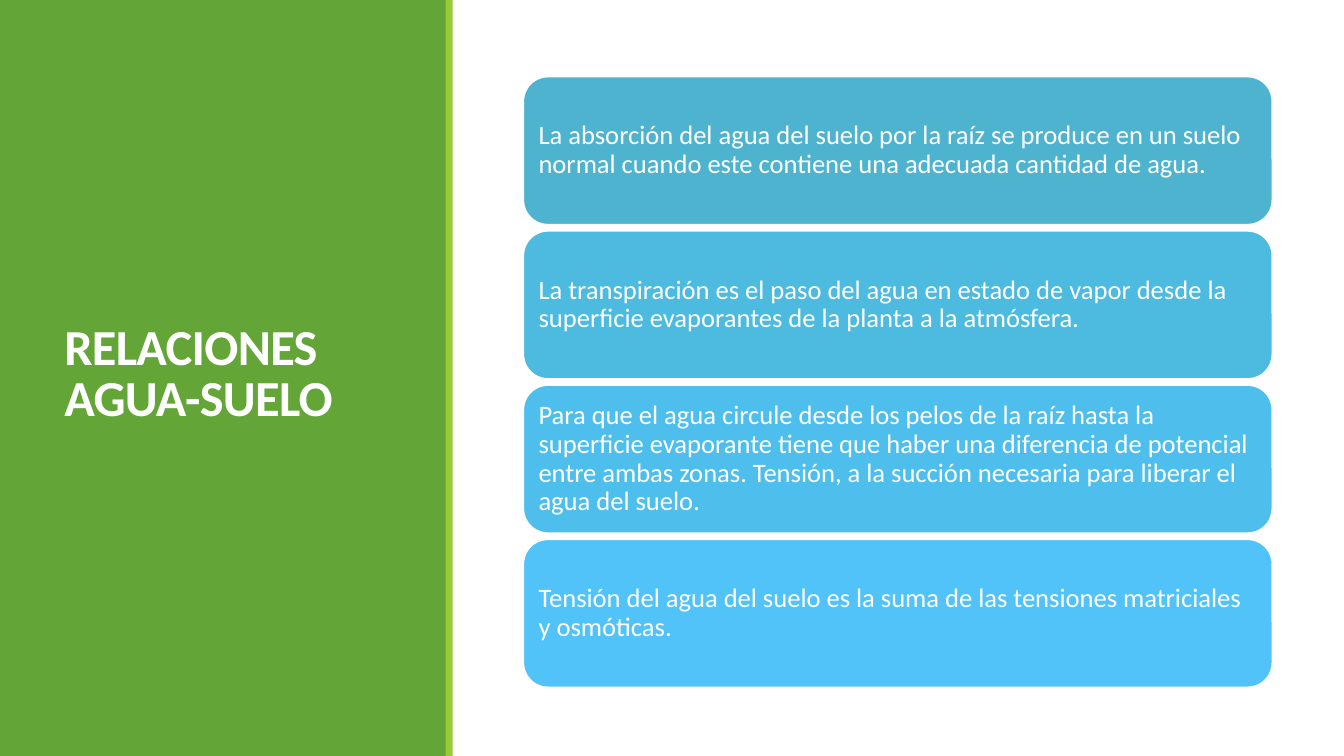
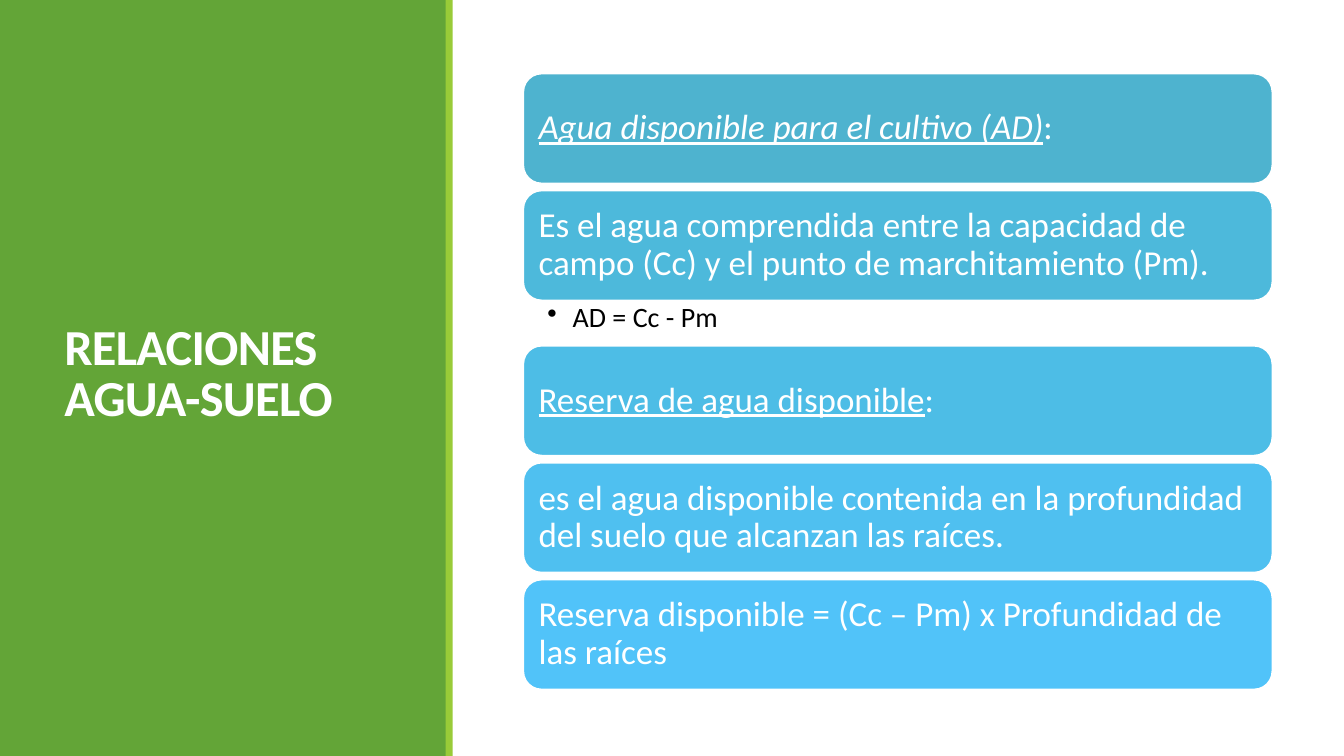
"""Build two slides on soil-water relations: a green title panel beside stacked cards."""
from dataclasses import dataclass

from lxml import etree
from pptx import Presentation
from pptx.dml.color import RGBColor
from pptx.enum import shapes, text
from pptx.oxml import ns
from pptx.util import Inches, Pt

FONT = "Calibri"
COLOURS = {
    "panel": "63A537",
    "stripe": "99CB38",
    "white": "FFFFFF",
    "black": "000000",
    "teal": "4EB3CF",
    "lagoon": "4DB9DB",
    "sea": "4DBADF",
    "blue": "4DBDE6",
    "azure": "4EBFED",
    "sky": "4FC0F0",
    "bright": "51C3F9",
}
TITLE = "RELACIONES AGUA-SUELO"
CARD_LEFT, CARD_WIDTH, DETAIL_HEIGHT = 5.19, 7.43, 0.45


@dataclass(frozen=True)
class Card:
    """A card with an optional underlined lead and a bullet below it."""

    fill: str
    body: str
    lead: str = ""
    italic_lead: bool = False
    detail: str = ""


@dataclass(frozen=True)
class Stack:
    """A column of equal cards and its measures in inches and points."""

    top: float
    height: float
    gap: float
    inset: float
    size: int
    cards: tuple[Card, ...]


STACKS = (
    Stack(0.76, 1.47, 0.06, 0.08, 19, (
        Card("teal", "La absorción del agua del suelo por la raíz se produce en un suelo "
             "normal cuando este contiene una adecuada cantidad de agua."),
        Card("sea", "La transpiración es el paso del agua en estado de vapor desde la "
             "superficie evaporantes de la planta a la atmósfera."),
        Card("azure", "Para que el agua circule desde los pelos de la raíz hasta la "
             "superficie evaporante tiene que haber una diferencia de potencial entre ambas "
             "zonas. Tensión, a la succión necesaria para liberar el agua del suelo."),
        Card("bright", "Tensión del agua del suelo es la suma de las tensiones matriciales "
             "y osmóticas."),
    )),
    Stack(0.73, 1.09, 0.07, 0.1, 25, (
        Card("teal", ":", lead="Agua disponible para el cultivo (AD)", italic_lead=True),
        Card("lagoon", "Es el agua comprendida entre la capacidad de campo (Cc) y el punto "
             "de marchitamiento (Pm).", detail="AD = Cc - Pm"),
        Card("blue", ":", lead="Reserva de agua disponible"),
        Card("sky", "es el agua disponible contenida en la profundidad del suelo que "
             "alcanzan las raíces."),
        Card("bright", "Reserva disponible = (Cc – Pm) x Profundidad de las raíces"),
    )),
)


def colour(name: str) -> RGBColor:
    """Return the named colour."""
    return RGBColor.from_string(COLOURS[name])


def add_block(slide, kind, left: float, top: float, width: float, height: float, fill: str):
    """Add a flat filled shape without outline."""
    block = slide.shapes.add_shape(
        kind, Inches(left), Inches(top), Inches(width), Inches(height))
    block.shadow.inherit = False
    block.fill.solid()
    block.fill.fore_color.rgb = colour(fill)
    block.line.fill.background()
    return block


def set_frame(frame, anchor, left: float, top: float, right: float, bottom: float) -> None:
    """Wrap a text frame and set its anchor and insets."""
    frame.word_wrap = True
    frame.vertical_anchor = anchor
    frame.margin_left, frame.margin_top = Inches(left), Inches(top)
    frame.margin_right, frame.margin_bottom = Inches(right), Inches(bottom)


def style(paragraph, size: int, ink: str, spacing: float = 0.9) -> None:
    """Set the font, colour and line spacing of a left-aligned paragraph."""
    paragraph.alignment = text.PP_ALIGN.LEFT
    paragraph.line_spacing = spacing
    paragraph.font.name = FONT
    paragraph.font.size = Pt(size)
    paragraph.font.color.rgb = colour(ink)


def add_title_panel(slide) -> None:
    """Draw the green panel, its stripe and the title."""
    rectangle = shapes.MSO_SHAPE.RECTANGLE
    add_block(slide, rectangle, 0, 0, 4.43, 7.5, "panel")
    add_block(slide, rectangle, 4.42, 0, 0.07, 7.5, "stripe")
    title = slide.shapes.add_textbox(Inches(0.54), Inches(0.57), Inches(3.37), Inches(6.31))
    set_frame(title.text_frame, text.MSO_ANCHOR.MIDDLE, 0.1, 0.05, 0.1, 0.05)
    heading = title.text_frame.paragraphs[0]
    words = heading.add_run()
    words.text = TITLE
    style(heading, 36, "white", 0.85)
    heading.font.bold = True
    words._r.get_or_add_rPr().set("spc", "-50")


def add_card(slide, stack: Stack, card: Card, top: float) -> None:
    """Draw one rounded card with its text."""
    box = add_block(slide, shapes.MSO_SHAPE.ROUNDED_RECTANGLE,
                    CARD_LEFT, top, CARD_WIDTH, stack.height, card.fill)
    box.line.color.rgb = colour("white")
    box.line.width = Pt(1.25)
    set_frame(box.text_frame, text.MSO_ANCHOR.MIDDLE, *[stack.inset] * 4)
    sentence = box.text_frame.paragraphs[0]
    style(sentence, stack.size, "white")
    if card.lead:
        lead = sentence.add_run()
        lead.text = card.lead
        lead.font.underline = True
        if card.italic_lead:
            lead.font.italic = True
    sentence.add_run().text = card.body


def add_detail(slide, detail: str, top: float) -> None:
    """Write a bulleted line below a card."""
    box = slide.shapes.add_textbox(
        Inches(CARD_LEFT), Inches(top), Inches(CARD_WIDTH), Inches(DETAIL_HEIGHT))
    set_frame(box.text_frame, text.MSO_ANCHOR.TOP, 0.24, 0.03, 0.19, 0.03)
    formula = box.text_frame.paragraphs[0]
    properties = formula._p.get_or_add_pPr()
    properties.set("marL", str(Inches(0.25)))
    properties.set("indent", str(Inches(-0.25)))
    etree.SubElement(properties, ns.qn("a:buChar")).set("char", "•")
    style(formula, 20, "black")
    formula.add_run().text = detail


def add_stack(slide, stack: Stack) -> None:
    """Draw the cards from top to bottom."""
    top = stack.top
    for card in stack.cards:
        add_card(slide, stack, card, top)
        top += stack.height
        if card.detail:
            add_detail(slide, card.detail, top)
            top += DETAIL_HEIGHT
        else:
            top += stack.gap


def main() -> None:
    """Build and save the presentation."""
    deck = Presentation()
    deck.slide_width, deck.slide_height = Inches(13.33), Inches(7.5)
    for stack in STACKS:
        slide = deck.slides.add_slide(deck.slide_layouts[6])
        add_title_panel(slide)
        add_stack(slide, stack)
    deck.save("out.pptx")


if __name__ == "__main__":
    main()
